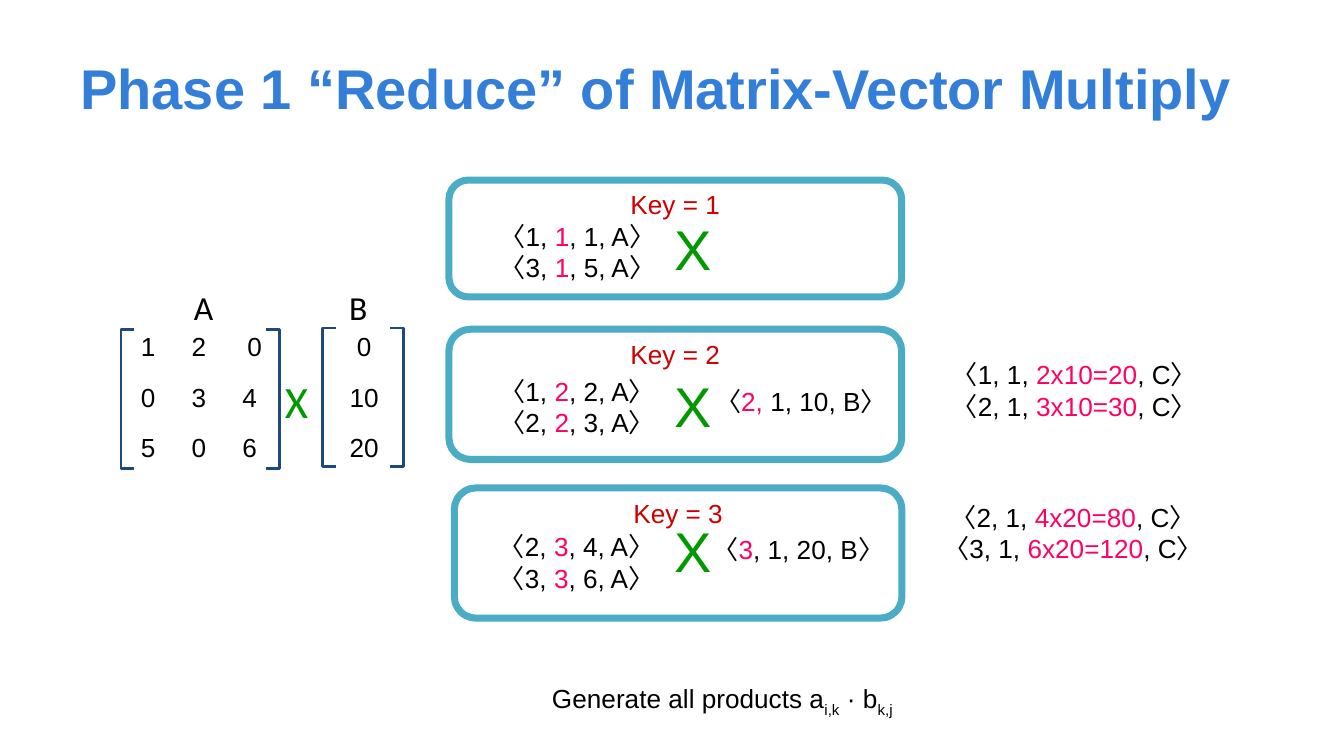
"""Builds a slide on the reduce phase of matrix-vector multiplication."""
from pptx import Presentation, util as u
from pptx.dml import color
from pptx.enum import shapes, text

Pt = u.Pt
CENTER, LEFT = text.PP_ALIGN.CENTER, text.PP_ALIGN.LEFT
TOP, MIDDLE = text.MSO_ANCHOR.TOP, text.MSO_ANCHOR.MIDDLE
BLACK, PINK, RED, GREEN = "000000", "FF0066", "CC0000", "009900"
BLUE, NAVY, TEAL, WHITE = "337ED9", "1F497D", "4BACC6", "FFFFFF"


def rgb(value):
    return color.RGBColor.from_string(value)


class Deck:
    def __init__(self, slide, font="Arial", size=14):
        self.s, self.font, self.size = slide, font, size

    def add_text(self, sp, paragraphs, size=None, font=None, bold=False, align=CENTER,
                 anchor=TOP, inset=(3.6, 3.6), spacing=None, indent=0):
        tf = sp.text_frame
        tf.word_wrap = True
        tf.vertical_anchor = anchor
        tf.margin_left = tf.margin_right = Pt(inset[0])
        tf.margin_top = tf.margin_bottom = Pt(inset[1])
        for i, runs in enumerate(paragraphs):
            p = tf.add_paragraph() if i else tf.paragraphs[0]
            p.alignment = align
            if spacing:
                p.line_spacing = spacing
            if indent:
                p._p.get_or_add_pPr().set("marL", str(Pt(indent)))
            for content, colour, *base in runs:
                r = p.add_run()
                r.text = content
                r.font.name = font or self.font
                r.font.size = Pt(size or self.size)
                r.font.bold = bold
                r.font.color.rgb = rgb(colour)
                if base:
                    r.font._element.set("baseline", str(base[0] * 1000))

    def label(self, x, y, w, h, paragraphs, **style):
        sp = self.s.shapes.add_textbox(Pt(x), Pt(y), Pt(w), Pt(h))
        self.add_text(sp, paragraphs, **style)

    def word(self, x, y, w, h, content, colour=BLACK, **style):
        self.label(x, y, w, h, [[(content, colour)]], **{"spacing": 0.9, **style})

    def tuples(self, x, y, w, h, rows):
        paragraphs = [list(zip(row, (BLACK, PINK, BLACK))) for row in rows]
        self.label(x, y, w, h, paragraphs, inset=(7.2, 7.2))

    def key_box(self, x, y, w, h, title):
        sp = self.s.shapes.add_shape(shapes.MSO_SHAPE.ROUNDED_RECTANGLE,
                                     Pt(x), Pt(y), Pt(w), Pt(h))
        sp.shadow.inherit = False
        sp.fill.solid()
        sp.fill.fore_color.rgb = rgb(WHITE)
        sp.line.color.rgb = rgb(TEAL)
        sp.line.width = Pt(3.77)
        self.add_text(sp, [[(title, RED)]], spacing=0.9)

    def bracket(self, tip, back, y, h=74.4):
        points = [(back, y), (back, y + h), (tip, y + h)]
        ff = self.s.shapes.build_freeform(Pt(tip), Pt(y))
        ff.add_line_segments([(Pt(a), Pt(b)) for a, b in points], close=False)
        sp = ff.convert_to_shape()
        sp.shadow.inherit = False
        sp.fill.background()
        sp.line.color.rgb = rgb(NAVY)
        sp.line.width = Pt(1.5)


def main():
    prs = Presentation()
    prs.slide_width, prs.slide_height = Pt(720), Pt(405)
    deck = Deck(prs.slides.add_slide(prs.slide_layouts[6]))

    deck.word(36, 9.4, 648, 74, "Phase 1 “Reduce” of Matrix-Vector Multiply", BLUE, size=30,
              bold=True, align=LEFT, anchor=MIDDLE, inset=(7.2, 3.6), spacing=None)

    cell, top = 27.2, 172.8
    for i, row in enumerate(("12", "034", "506")):
        for j, value in enumerate(row):
            deck.word(68.4 + j * cell, top + i * cell, cell, cell, value,
                      align=LEFT, anchor=MIDDLE, inset=(7.2, 3.6))
    deck.word(128.9, top, cell, cell, "0", align=LEFT, anchor=MIDDLE)
    for i, value in enumerate(("0", "10", "20")):
        deck.word(180, top + i * cell, 30.2, cell, value, anchor=MIDDLE)
    deck.word(68.4, 152.6, 81.4, 20.2, "A", size=18, font="Calibri")
    deck.word(180, 152.6, 30.2, 20.2, "B", size=18, font="Calibri",
              align=LEFT, inset=(7.2, 3.6))
    deck.word(149, 200, 23.8, 25.2, "X", GREEN, size=24, font="Calibri", align=LEFT)

    for tip, back, y in ((72, 64.8, 176.6), (142.6, 149.8, 176.6),
                         (180, 172.8, 175.7), (208.8, 216, 175.7)):
        deck.bracket(tip, back, y)

    for key, x, y, w, h, times_y in ((1, 240.5, 96.5, 242.6, 62.6, 122.4),
                                     (2, 240.5, 176.4, 242.6, 69.8, 206.6),
                                     (3, 243.4, 261.4, 239.8, 69.8, 284.4)):
        deck.key_box(x, y, w, h, f"Key = {key}")
        deck.word(357.8, times_y, 23.8, 25.2, "X", GREEN, size=30, anchor=MIDDLE)

    for x, y, w, h, rows in (
        (243.4, 110.9, 131.8, 48.2, [("〈1, ", "1", ", 1, A〉"), ("〈3, ", "1", ", 5, A〉")]),
        (249.8, 193.7, 118.8, 48.2, [("〈1, ", "2", ", 2, A〉"), ("〈2, ", "2", ", 3, A〉")]),
        (375.1, 199.4, 108, 31.7, [("〈", "2,", " 1, 10, B〉")]),
        (254.9, 277.2, 108, 48.2, [("〈2, ", "3", ", 4, A〉"), ("〈3, ", "3", ", 6, A〉")]),
        (373.7, 278.6, 108, 31.7, [("〈", "3", ", 1, 20, B〉")]),
        (501.1, 185, 149, 48.2,
         [("〈1, 1, ", "2x10=20", ", C〉"), ("〈2, 1, ", "3x10=30", ", C〉")]),
        (491, 261.4, 167.8, 48.2,
         [("〈2, 1, ", "4x20=80", ", C〉"), ("〈3, 1, ", "6x20=120", ", C〉")]),
    ):
        deck.tuples(x, y, w, h, rows)

    deck.label(223.2, 362.2, 291.6, 24.5,
               [[("Generate all products a", BLACK), ("i,k", BLACK, -25),
                 (" · b", BLACK), ("k,j", BLACK, -25)]], inset=(7.2, 3.6), indent=36)

    prs.save("out.pptx")


if __name__ == "__main__":
    main()
